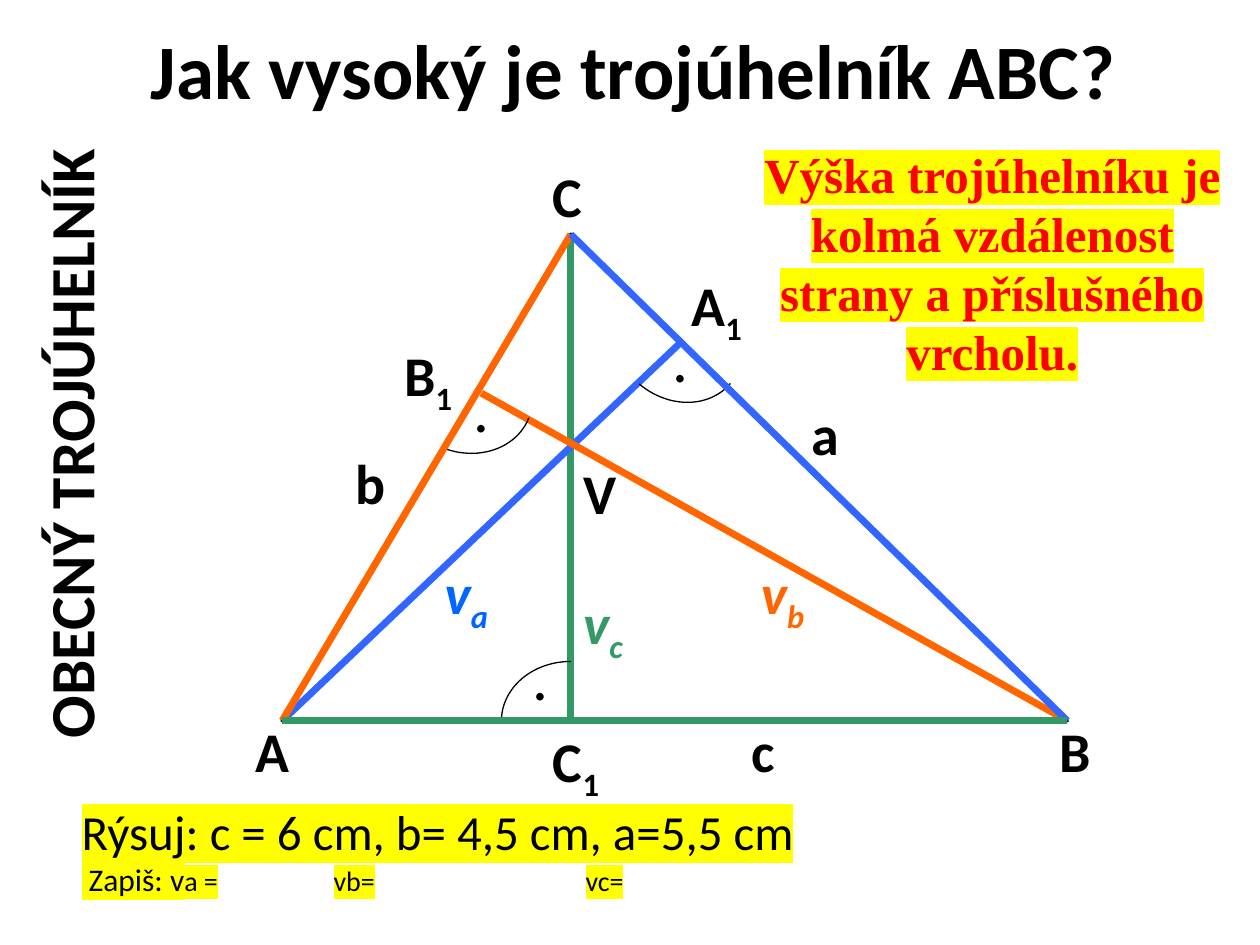
from math import cos, pi, sin

from lxml import etree
from pptx import Presentation
from pptx.dml.color import RGBColor
from pptx.enum.shapes import MSO_CONNECTOR, MSO_SHAPE
from pptx.enum.text import MSO_AUTO_SIZE, PP_ALIGN
from pptx.oxml.ns import qn
from pptx.util import Inches, Pt

LEFT, CENTER = PP_ALIGN.LEFT, PP_ALIGN.CENTER
GROW = MSO_AUTO_SIZE.SHAPE_TO_FIT_TEXT
STRAIGHT = MSO_CONNECTOR.STRAIGHT
TRIANGLE = MSO_SHAPE.ISOSCELES_TRIANGLE

BLACK, RED, YELLOW = "000000", "FF0000", "FFFF00"
GREEN, BLUE, ORANGE, LABEL_BLUE = "339966", "3366FF", "FF6600", "0066FF"


def rgb(color):
    return RGBColor.from_string(color)


def add_run(p, text, size=32, color=BLACK, bold=False, italic=False,
            font="Calibri", highlight=None, sub=False):
    r = p.add_run()
    r.text = text
    f = r.font
    f.size, f.bold, f.italic = Pt(size), bold, italic
    f.color.rgb = rgb(color)
    rPr = r._r.get_or_add_rPr()
    if highlight:
        mark = etree.SubElement(rPr, qn("a:highlight"))
        etree.SubElement(mark, qn("a:srgbClr")).set("val", highlight)
    f.name = font
    if sub:
        rPr.set("baseline", "-25000")


def add_text(s, box, paragraphs, align=LEFT, wrap=True, vert=None, tabs=(), **fmt):
    """Each paragraph is a list of (text, own format) runs; fmt is shared."""
    tf = s.shapes.add_textbox(*map(Inches, box)).text_frame
    tf.word_wrap, tf.auto_size = wrap, GROW
    if vert:
        tf._txBody.bodyPr.set("vert", vert)
    for i, runs in enumerate(paragraphs):
        p = tf.add_paragraph() if i else tf.paragraphs[0]
        p.alignment = align
        if tabs:
            tab_list = etree.SubElement(p._p.get_or_add_pPr(), qn("a:tabLst"))
            for pos in tabs:
                etree.SubElement(tab_list, qn("a:tab"), pos=str(Inches(pos)), algn="l")
        for text, own in runs:
            add_run(p, text, **{**fmt, **own})


def add_line(s, start, end, color):
    line = s.shapes.add_connector(STRAIGHT, *map(Inches, (*start, *end)))
    line.line.color.rgb = rgb(color)
    line.line.width = Pt(4)
    etree.SubElement(line._element.spPr, qn("a:effectLst"))


def outline(sp, width):
    sp.shadow.inherit = False
    sp.fill.background()
    sp.line.color.rgb = rgb(BLACK)
    sp.line.width = Pt(width)


def add_angle_arc(s, x, y, w, h, rotation, steps=24):
    """Quarter ellipse from the top right to the bottom left of its box."""
    angles = [pi / 2 * i / steps for i in range(steps + 1)]
    points = [(Inches(x + w * (1 - sin(t))), Inches(y + h * (1 - cos(t))))
              for t in angles]
    builder = s.shapes.build_freeform(*points[0])
    builder.add_line_segments(points[1:], close=False)
    sp = builder.convert_to_shape()
    outline(sp, 0.75)
    sp.rotation = rotation


def draw_triangle(s, x, y, w, h):
    apex = 2.29
    a, b, c = (x, y + h), (x + w, y + h), (x + apex, y)

    sp = s.shapes.add_shape(TRIANGLE, *map(Inches, (x, y, w, h)))
    sp.adjustments[0] = apex / w
    outline(sp, 2)

    # Altitudes
    add_line(s, c, (x + apex, y + h), GREEN)
    add_line(s, (x + 3.15, y + 0.87), a, BLUE)
    add_line(s, (x + 1.58, y + 1.26), b, ORANGE)

    # Right angle marks: arc offset, rotation, dot offset
    for ax, ay, rotation, dx, dy in [
        (1.74, 3.39, 0, 1.89, 3.15),
        (1.34, 1.34, 201.4, 1.42, 1.02),
        (2.92, 0.95, 220.2, 3.0, 0.63),
    ]:
        add_angle_arc(s, x + ax, y + ay, 0.55, 0.47, rotation)
        add_text(s, (x + dx, y + dy, 0.71, 0.7), [[(".", {})]], size=36)

    # Sides
    add_line(s, a, c, ORANGE)
    add_line(s, c, b, BLUE)
    add_line(s, a, b, GREEN)

    # Labels: text, subscript, offset, width, colour
    for text, sub, dx, dy, width, color in [
        ("A", "", -0.31, 3.78, 0.63, BLACK),
        ("B", "", 6.07, 3.78, 0.63, BLACK),
        ("C", "", 2.05, -0.63, 0.63, BLACK),
        ("b", "", 0.48, 1.65, 0.63, BLACK),
        ("c", "", 3.63, 3.78, 0.63, BLACK),
        ("a", "", 4.1, 1.26, 0.63, BLACK),
        ("V", "", 2.29, 1.73, 0.63, BLACK),
        ("v", "b", 3.7, 2.52, 0.87, ORANGE),
        ("v", "c", 2.29, 2.76, 0.61, GREEN),
        ("v", "a", 1.19, 2.52, 0.61, LABEL_BLUE),
        ("B", "1", 0.87, 0.79, 0.87, BLACK),
        ("C", "1", 2.05, 3.86, 0.87, BLACK),
        ("A", "1", 3.15, 0.24, 0.87, BLACK),
    ]:
        runs = [(text, {})] + ([(sub, {"sub": True})] if sub else [])
        add_text(s, (x + dx, y + dy, width, 0.63), [runs],
                 color=color, bold=True, italic=color != BLACK)


def draw_headings(s, x, y):
    add_text(s, (x + 0.9, y, 7.94, 0.84), [[("Jak vysoký je trojúhelník ABC?", {})]],
             wrap=False, size=44, bold=True)
    add_text(s, (x, y + 0.55, 0.81, 5.28), [[("OBECNÝ TROJÚHELNÍK", {})]],
             vert="vert270", size=36, bold=True)


def draw_definition(s, *box):
    text = "Výška trojúhelníku je kolmá vzdálenost strany a příslušného vrcholu."
    add_text(s, box, [[(text, {})]], align=CENTER, size=28, color=RED,
             bold=True, font="Times New Roman", highlight=YELLOW)


def draw_task(s, *box):
    add_text(s, box, [
        [("Rýsuj: c = 6 cm, b= 4,5 cm, a=5,5 cm", {"size": 28})],
        [(" Zapiš: v", {"size": 18}), ("a =\tvb=\tvc=", {"size": 16})],
    ], wrap=False, tabs=(2, 4), highlight=YELLOW)


def main():
    prs = Presentation()
    prs.slide_width, prs.slide_height = Inches(10), Inches(7.5)
    s = prs.slides.add_slide(prs.slide_layouts[6])
    draw_triangle(s, 2.24, 1.86, 6.23, 3.86)
    draw_headings(s, 0.2, 0.13)
    draw_definition(s, 5.83, 1.1, 4.09, 1.99)
    draw_task(s, 0.55, 6.31, 5.93, 0.88)
    prs.save("out.pptx")


if __name__ == "__main__":
    main()
